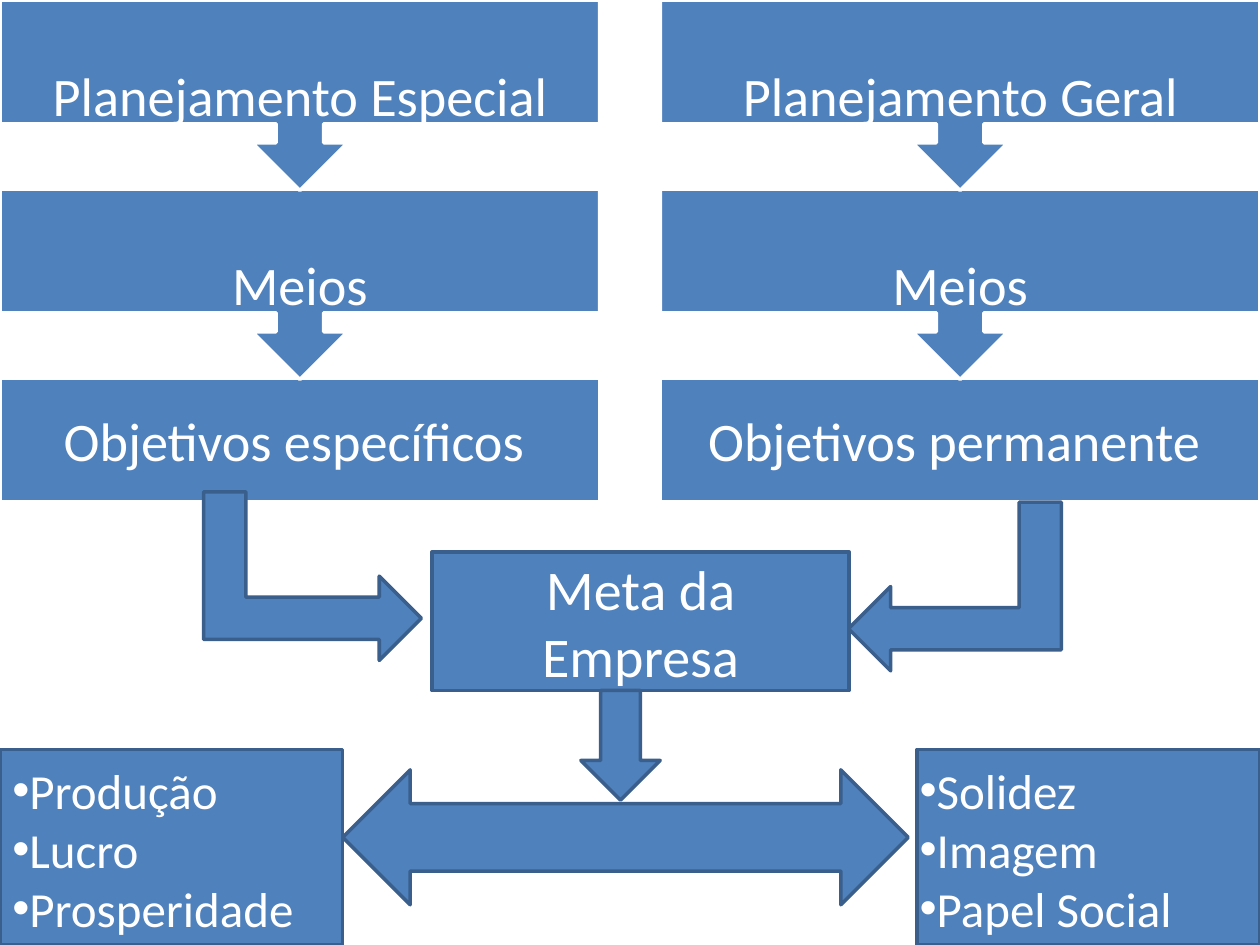
"""Builds a slide on how special and general planning lead to the company goal."""
from lxml import etree
from pptx import Presentation
from pptx.dml.color import RGBColor
from pptx.enum.shapes import MSO_SHAPE
from pptx.enum.text import MSO_ANCHOR, PP_ALIGN
from pptx.oxml.ns import qn
from pptx.util import Cm, Pt

PROCESS = MSO_SHAPE.FLOWCHART_PROCESS
RECTANGLE = MSO_SHAPE.RECTANGLE
CALLOUT = MSO_SHAPE.UP_ARROW_CALLOUT
BENT_ARROW = MSO_SHAPE.BENT_UP_ARROW
DOUBLE_ARROW = MSO_SHAPE.LEFT_RIGHT_ARROW
DOWN_ARROW = MSO_SHAPE.DOWN_ARROW
MIDDLE = MSO_ANCHOR.MIDDLE
CENTER = PP_ALIGN.CENTER

BLUE, DARK_BLUE, WHITE = "4F81BD", "3A5F8C", "FFFFFF"
COLUMN_WIDTH, CALLOUT_HEIGHT, STEP_HEIGHT, STEP_PITCH = 12.09, 3.84, 2.49, 3.81


def add_block(kind, left, top, width, height, outline=DARK_BLUE):
    block = slide.shapes.add_shape(kind, Cm(left), Cm(top), Cm(width), Cm(height))
    block.shadow.inherit = False
    block.fill.solid()
    block.fill.fore_color.rgb = RGBColor.from_string(BLUE)
    block.line.color.rgb = RGBColor.from_string(outline)
    block.line.width = Pt(2)
    return block


def write(holder, text, size, inset=None, bulleted=False):
    frame = holder.text_frame
    frame.word_wrap = True
    frame.text = text
    if inset:
        frame.margin_left = frame.margin_right = Cm(inset)
        frame.margin_top = frame.margin_bottom = Cm(inset)
    if not bulleted:
        frame.vertical_anchor = MIDDLE
    for paragraph in frame.paragraphs:
        if bulleted:
            properties = paragraph._p.get_or_add_pPr()
            etree.SubElement(properties, qn("a:buFont")).set("typeface", "Arial")
            etree.SubElement(properties, qn("a:buChar")).set("char", "•")
        else:
            paragraph.alignment = CENTER
        for run in paragraph.runs:
            run.font.name = "Calibri"
            run.font.size = Pt(size)
            run.font.color.rgb = RGBColor.from_string(WHITE)


presentation = Presentation()
presentation.slide_width = Cm(25.4)
presentation.slide_height = Cm(19.05)
slide = presentation.slides.add_slide(presentation.slide_layouts[6])

for left in (18.49, 0):
    add_block(PROCESS, left, 15.11, 6.91, 3.94)

plans = [
    (0, ["Planejamento Especial", "Meios"], "Objetivos específicos "),
    (13.31, ["Planejamento Geral", "Meios"], "Objetivos permanente "),
]
for left, steps, objective in plans:
    objective_block = add_block(
        RECTANGLE, left, len(steps) * STEP_PITCH, COLUMN_WIDTH, STEP_HEIGHT, WHITE
    )
    write(objective_block, objective, 31, 0.61)
    for row, step in reversed(list(enumerate(steps))):
        area = (left, row * STEP_PITCH, COLUMN_WIDTH, CALLOUT_HEIGHT)
        add_block(CALLOUT, *area, WHITE).rotation = 180
        step_label = slide.shapes.add_textbox(*map(Cm, area))
        write(step_label, step, 31, 0.61)

special_arrow = add_block(BENT_ARROW, 4.6, 9.42, 3.4, 4.39)
special_arrow.rotation = 90
general_arrow = add_block(BENT_ARROW, 17.55, 9.68, 3.4, 4.29)
general_arrow.rotation = 90
general_arrow._element.spPr.find(qn("a:xfrm")).set("flipV", "1")

goal = add_block(PROCESS, 8.71, 11.13, 8.41, 2.79)
write(goal, "Meta da Empresa", 32)

results = [
    (0, 8.89, "Produção\nLucro\nProsperidade"),
    (18.29, 7.11, "Solidez\nImagem\nPapel Social"),
]
for left, width, items in results:
    result_list = slide.shapes.add_textbox(Cm(left), Cm(15.21), Cm(width), Cm(3.84))
    write(result_list, items, 28, bulleted=True)

add_block(DOUBLE_ARROW, 6.91, 15.52, 11.4, 2.72)
add_block(DOWN_ARROW, 11.71, 13.92, 1.6, 2.21)

presentation.save("out.pptx")
